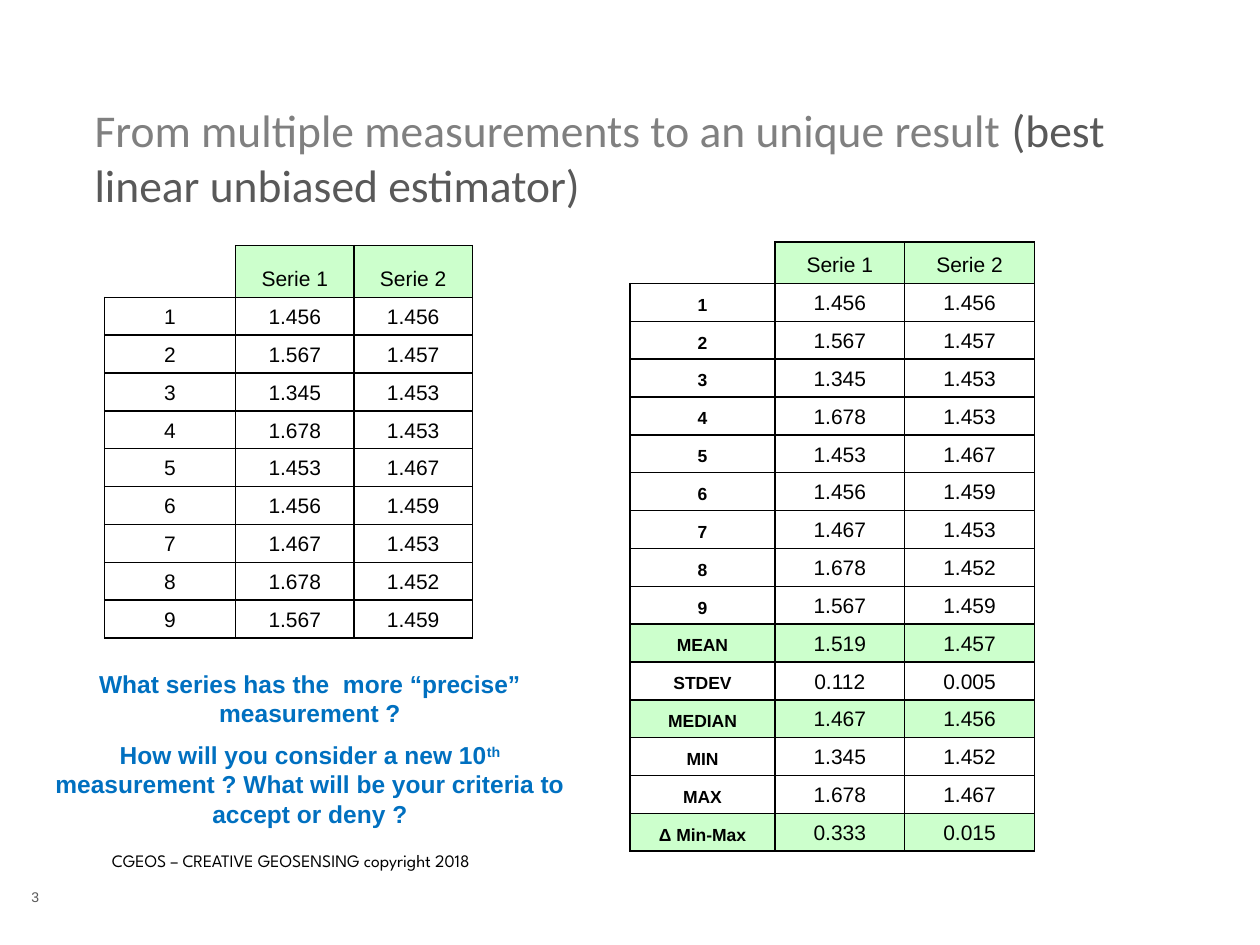
"""Build a slide that sets two series of measurements beside their statistics."""
from dataclasses import dataclass

from lxml import etree
from pptx import Presentation
from pptx.dml.color import RGBColor
from pptx.enum.text import MSO_ANCHOR, PP_ALIGN
from pptx.oxml.ns import qn
from pptx.util import Inches, Pt

LEFT, CENTER = PP_ALIGN.LEFT, PP_ALIGN.CENTER
BOTTOM, TOP = MSO_ANCHOR.BOTTOM, MSO_ANCHOR.TOP
PLAIN = "{2D5ABB26-0587-4C30-8999-92F81FD0307C}"

HEAD = ("", "Serie 1", "Serie 2")
DATA = [
    ("1", "1.456", "1.456"),
    ("2", "1.567", "1.457"),
    ("3", "1.345", "1.453"),
    ("4", "1.678", "1.453"),
    ("5", "1.453", "1.467"),
    ("6", "1.456", "1.459"),
    ("7", "1.467", "1.453"),
    ("8", "1.678", "1.452"),
    ("9", "1.567", "1.459"),
]
STATS = [
    ("MEAN", "1.519", "1.457"),
    ("STDEV", "0.112", "0.005"),
    ("MEDIAN", "1.467", "1.456"),
    ("MIN", "1.345", "1.452"),
    ("MAX", "1.678", "1.467"),
    ("Δ Min-Max", "0.333", "0.015"),
]
MARKED = {"", "MEAN", "MEDIAN", "Δ Min-Max"}


@dataclass(frozen=True)
class Theme:
    """Hold colours and text formats."""

    green: str = "CCFFCC"
    black: str = "000000"
    title: tuple = ("Calibri", 26, "808080", False)
    aside: tuple = ("Calibri", 26, "595959", False)
    cell: tuple = ("Arial", 12, "000000", False)
    label: tuple = ("Arial", 10, "000000", True)
    ask: tuple = ("Arial", 14, "0070C0", True)
    foot: tuple = ("League Spartan", 10, "000000", False)
    page: tuple = ("Arial", 8, "595959", False)


class Deck:
    """Hold the theme and the current slide."""

    def __init__(self, theme):
        """Open a blank title-only slide."""
        self.theme = theme
        self.show = Presentation()
        self.show.slide_width, self.show.slide_height = Inches(10), Inches(7.5)
        self.slide = self.show.slides.add_slide(self.show.slide_layouts[5])

    def put(self, para, text, look, align=LEFT, raised=False):
        """Add one formatted run to a paragraph."""
        para.alignment = align
        run = para.add_run()
        run.text = text
        name, size, color, bold = look
        for key, value in {"name": name, "size": Pt(size), "bold": bold}.items():
            setattr(run.font, key, value)
        run.font.color.rgb = RGBColor.from_string(color)
        if raised:
            run._r.get_or_add_rPr().set("baseline", "30000")

    def frame(self, shape, inset, anchor):
        """Set wrapping, insets and anchor of a text frame."""
        frame = shape.text_frame
        values = {
            "word_wrap": True,
            "vertical_anchor": anchor,
            "margin_left": Inches(inset),
            "margin_right": Inches(inset),
            "margin_top": Inches(0.05),
            "margin_bottom": Inches(0.05),
        }
        for key, value in values.items():
            setattr(frame, key, value)
        return frame

    def title(self, box, runs):
        """Place and fill the title."""
        shape = self.slide.shapes.title
        for key, value in zip(("left", "top", "width", "height"), box):
            setattr(shape, key, Inches(value))
        para = self.frame(shape, 0, BOTTOM).paragraphs[0]
        for text, look in runs:
            self.put(para, text, look)

    def text(self, box, paras, look, align=LEFT, inset=0.1, gap=0):
        """Add a text box whose paragraphs are lists of (text, raised)."""
        shape = self.slide.shapes.add_textbox(*map(Inches, box))
        frame = self.frame(shape, inset, TOP)
        for i, runs in enumerate(paras):
            para = frame.add_paragraph() if i else frame.paragraphs[0]
            if i:
                para.space_before = Pt(gap)
            for text, raised in runs:
                self.put(para, text, look, align, raised)

    def edge(self, cell, sides):
        """Draw thin lines on the given sides of a cell."""
        props = cell._tc.get_or_add_tcPr()
        for side in sides:
            line = etree.SubElement(props, qn(f"a:ln{side}"), w=str(Pt(1)))
            fill = etree.SubElement(line, qn("a:solidFill"))
            etree.SubElement(fill, qn("a:srgbClr"), val=self.theme.black)

    def table(self, spot, cols, head, step, rows, look):
        """Add a ruled table with green header and marked rows."""
        size = (sum(cols), head + step * (len(rows) - 1))
        shape = self.slide.shapes.add_table(
            len(rows), len(cols), *map(Inches, spot + size))
        grid = shape.table
        grid._tbl.tblPr.find(qn("a:tableStyleId")).text = PLAIN
        grid.first_row = grid.horz_banding = False
        for col, width in zip(grid.columns, cols):
            col.width = Inches(width)
        for r, row in enumerate(rows):
            grid.rows[r].height = Inches(step if r else head)
            for c, text in enumerate(row):
                cell = grid.cell(r, c)
                cell.vertical_anchor = BOTTOM
                self.edge(cell, "LRTB" if text else "RB")
                if not text:
                    cell.margin_top = cell.margin_bottom = 0
                    continue
                para = cell.text_frame.paragraphs[0]
                self.put(para, text, self.theme.cell if c else look, CENTER)
                if row[0] in MARKED:
                    cell.fill.solid()
                    cell.fill.fore_color.rgb = RGBColor.from_string(self.theme.green)


def main():
    """Build and save the slide."""
    theme = Theme()
    deck = Deck(theme)
    deck.text((0.25, 7, 0.64, 0.23), [[("3", False)]], theme.page, inset=0)
    deck.text((0.79, 6.7, 5.45, 0.27),
              [[("CGEOS – CREATIVE GEOSENSING copyright 2018", False)]], theme.foot)
    deck.title((0.75, 0.75, 8.86, 0.98), [
        ("From multiple measurements to an unique result ", theme.title),
        ("(best linear unbiased estimator)", theme.aside),
    ])
    deck.table((5, 1.92), (1.15, 1.03, 1.03), 0.33, 0.26,
               [HEAD, *DATA, *STATS], theme.label)
    deck.table((0.83, 1.95), (1.04, 0.94, 0.94), 0.41, 0.29,
               [HEAD, *DATA], theme.cell)
    deck.text((0.25, 5.26, 4.42, 1.4), [
        [("What series has the  more “precise” measurement ?", False)],
        [("How will you consider a new 10", False), ("th", True),
         (" measurement ? What will be your criteria to accept or deny ?", False)],
    ], theme.ask, CENTER, gap=7)
    deck.show.save("out.pptx")


if __name__ == "__main__":
    main()
